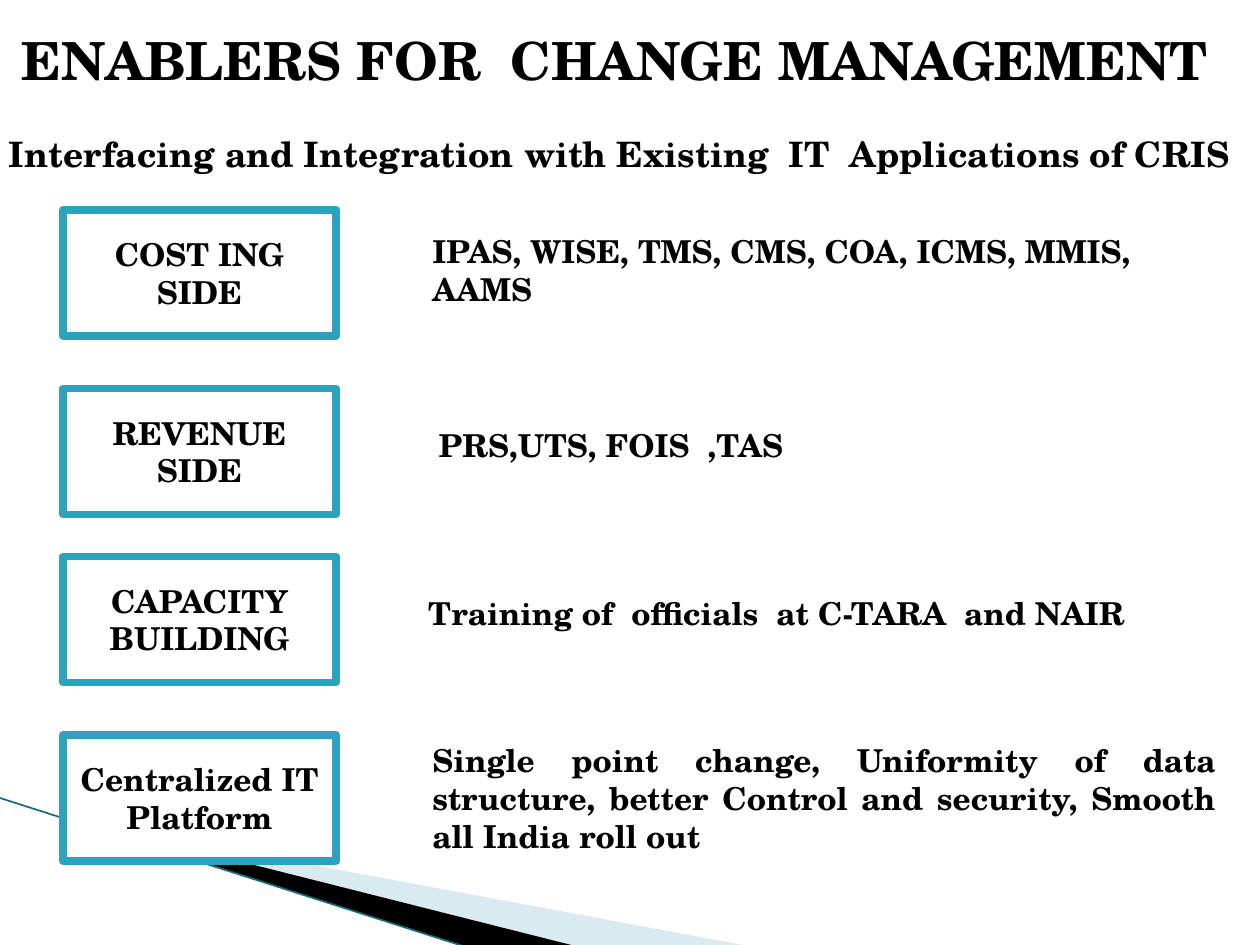
from dataclasses import dataclass

from lxml.etree import SubElement
from pptx import Presentation
from pptx.dml.color import RGBColor
from pptx.enum.shapes import MSO_CONNECTOR, MSO_SHAPE
from pptx.enum.text import MSO_ANCHOR, MSO_AUTO_SIZE, PP_ALIGN
from pptx.oxml.ns import qn
from pptx.util import Pt


@dataclass(frozen=True)
class Theme:
    """Colours, font and type sizes of the slide."""

    font: str = "TeX Gyre Schola"
    ink: str = "000000"
    paper: str = "FFFFFF"
    frame: str = "2DA2BF"
    wedge: str = "A0CBDC"
    edge: str = "16697F"
    title_size: int = 30
    subtitle_size: int = 20
    text_size: int = 18
    frame_width: float = 4.33
    edge_width: float = 0.95


class EnablersSlide:
    """Draws styled elements on one slide."""

    def __init__(self, slide, theme):
        self.slide = slide
        self.theme = theme

    def set_text(self, frame, text, size, align, anchor=MSO_ANCHOR.TOP, wrap=True):
        """Fill a text frame and format its paragraphs."""
        frame.text = text
        frame.auto_size = MSO_AUTO_SIZE.NONE
        frame.word_wrap = wrap
        frame.vertical_anchor = anchor
        for paragraph in frame.paragraphs:
            paragraph.alignment = align
            for run in paragraph.runs:
                run.font.name = self.theme.font
                run.font.size = Pt(size)
                run.font.bold = True
                run.font.color.rgb = RGBColor.from_string(self.theme.ink)

    def title(self, text, left, top, width, height):
        """Place the heading in the title placeholder."""
        heading = self.slide.shapes.title
        heading.left, heading.top = Pt(left), Pt(top)
        heading.width, heading.height = Pt(width), Pt(height)
        self.set_text(heading.text_frame, text, self.theme.title_size,
                      PP_ALIGN.CENTER, wrap=False)

    def label(self, text, left, top, width, height, size=None,
              align=PP_ALIGN.LEFT, wrap=True):
        """Add a plain text box."""
        box = self.slide.shapes.add_textbox(Pt(left), Pt(top), Pt(width), Pt(height))
        self.set_text(box.text_frame, text, size or self.theme.text_size, align, wrap=wrap)

    def enabler(self, text, left, top, width, height):
        """Add a framed box naming one enabler."""
        box = self.slide.shapes.add_shape(
            MSO_SHAPE.RECTANGLE, Pt(left), Pt(top), Pt(width), Pt(height))
        box.shadow.inherit = False
        box.fill.solid()
        box.fill.fore_color.rgb = RGBColor.from_string(self.theme.paper)
        box.line.color.rgb = RGBColor.from_string(self.theme.frame)
        box.line.width = Pt(self.theme.frame_width)
        SubElement(box._element.spPr.find(qn("a:ln")), qn("a:round"))
        self.set_text(box.text_frame, text, self.theme.text_size,
                      PP_ALIGN.CENTER, MSO_ANCHOR.MIDDLE)

    def wedge(self, corners, colour, opacity=100):
        """Add a filled outline through the given corners."""
        start, *others = [(Pt(x), Pt(y)) for x, y in corners]
        builder = self.slide.shapes.build_freeform(*start)
        builder.add_line_segments(others, close=True)
        outline = builder.convert_to_shape()
        outline.shadow.inherit = False
        outline.line.fill.background()
        outline.fill.solid()
        outline.fill.fore_color.rgb = RGBColor.from_string(colour)
        if opacity < 100:
            tint = outline._element.spPr.find(".//" + qn("a:srgbClr"))
            SubElement(tint, qn("a:alpha")).set("val", str(opacity * 1000))

    def edge(self, x1, y1, x2, y2):
        """Add a thin straight line."""
        line = self.slide.shapes.add_connector(
            MSO_CONNECTOR.STRAIGHT, Pt(x1), Pt(y1), Pt(x2), Pt(y2))
        line.line.color.rgb = RGBColor.from_string(self.theme.edge)
        line.line.width = Pt(self.theme.edge_width)
        SubElement(line._element.spPr, qn("a:effectLst"))


def main():
    """Build the slide and save it."""
    deck = Presentation()
    deck.slide_width, deck.slide_height = Pt(720), Pt(540)
    theme = Theme()
    page = EnablersSlide(deck.slides.add_slide(deck.slide_layouts[5]), theme)

    page.wedge([(39.6, 468.4), (428.4, 540.7), (328.3, 540.7), (39.6, 468)],
               theme.wedge, opacity=40)
    page.wedge([(38.2, 467.3), (329, 540.7), (267.8, 541.4), (38.9, 468)], theme.ink)
    page.edge(-0.7, 455.8, 267.1, 541.4)

    page.title("ENABLERS FOR  CHANGE MANAGEMENT", 0, 12.2, 703, 44)
    page.label("Interfacing and Integration with Existing  IT  Applications of CRIS",
               -2.2, 72.2, 718, 32, size=theme.subtitle_size, wrap=False)

    enablers = [
        ("COST ING SIDE", 120),
        ("REVENUE SIDE", 222),
        ("CAPACITY BUILDING", 318),
        ("Centralized IT\nPlatform", 420),
    ]
    for name, top in enablers:
        page.enabler(name, 36, top, 156, 72)

    page.label("IPAS, WISE, TMS, CMS, COA, ICMS, MMIS, AAMS", 240, 129, 438, 51)
    page.label("PRS,UTS, FOIS  ,TAS", 243.5, 240, 214, 29, wrap=False)
    page.label("Training of  officials  at C-TARA  and NAIR",
               237.6, 336, 419, 29, wrap=False)
    page.label("Single point change, Uniformity of data structure, "
               "better Control and security, Smooth all India roll out",
               240, 420, 462, 73, align=PP_ALIGN.JUSTIFY)

    deck.save("out.pptx")


if __name__ == "__main__":
    main()
